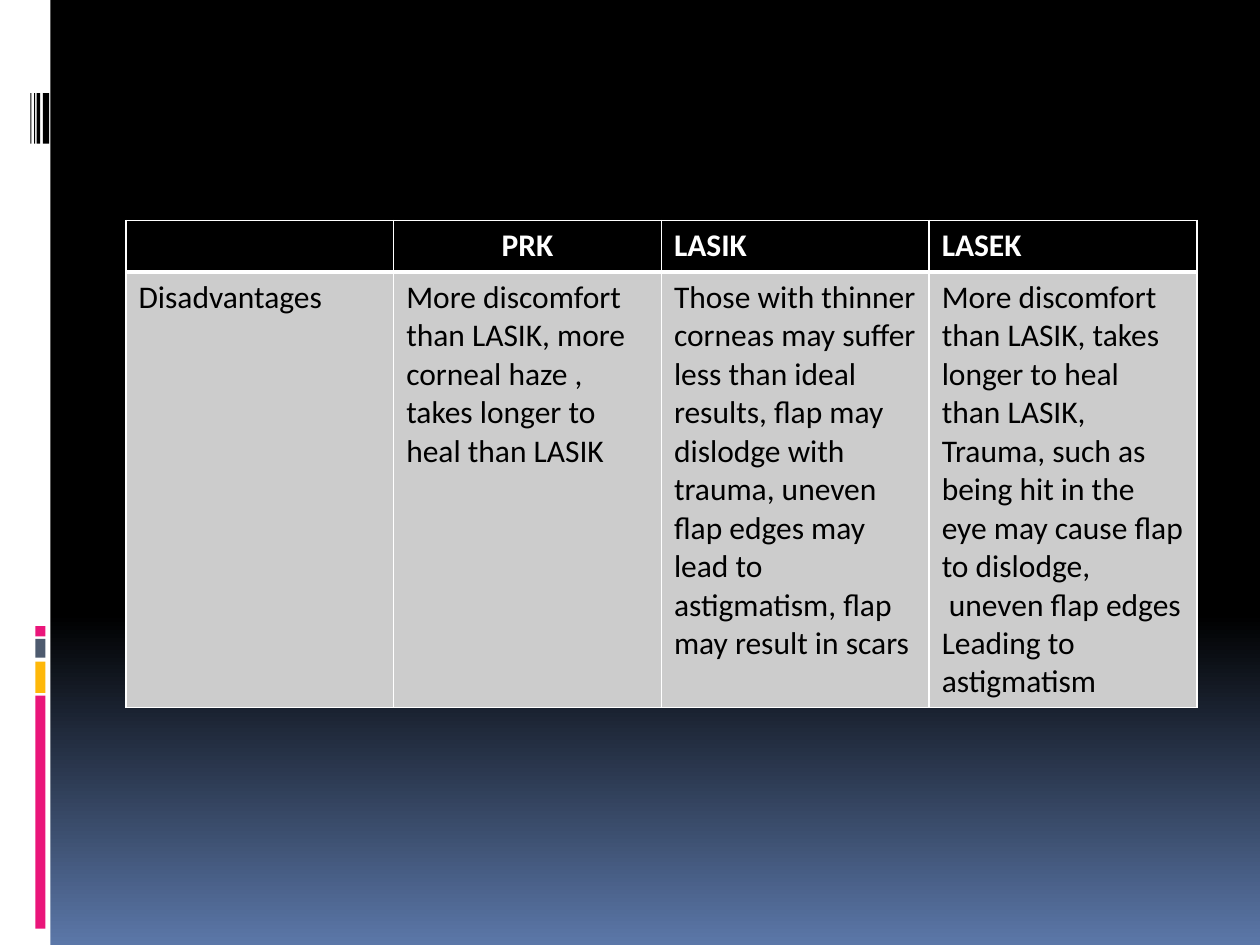
from dataclasses import dataclass

from lxml import etree
from pptx import Presentation, util as u
from pptx.dml.color import RGBColor
from pptx.enum import shapes, text
from pptx.oxml import ns


@dataclass(frozen=True)
class Theme:
    black: str = "000000"
    white: str = "FFFFFF"
    pink: str = "EA157A"
    amber: str = "FEB80A"
    slate: str = "4E5B6F"
    dusk: str = "5B77A8"
    body: str = "CCCCCC"
    font: str = "Calibri"
    size: int = 18
    thin: int = 1
    thick: int = 3


@dataclass(frozen=True)
class Bar:
    left: float
    top: float
    width: float
    height: float
    color: str


THEME = Theme()
WIDTH, HEIGHT = 10, 7.5
TABLE_LEFT, TABLE_TOP, TABLE_WIDTH = 1, 1.75, 8.5
ROW_HEIGHTS = (0.41, 3.4)

SIDE_PANEL = Bar(0, 0, 0.4, HEIGHT, THEME.white)
COLOR_BARS = [
    Bar(0.28, top, 0.08, height, color)
    for top, height, color in (
        (5.52, 1.85, THEME.pink),
        (5.25, 0.25, THEME.amber),
        (5.07, 0.15, THEME.slate),
        (4.97, 0.08, THEME.pink),
    )
]
BARCODE = [
    Bar(left, 0.74, width, 0.4, THEME.black)
    for left, width in ((0.34, 0.05), (0.29, 0.03), (0.27, 0.01), (0.24, 0.01))
]

PROCEDURES = ("", "PRK", "LASIK", "LASEK")
DISADVANTAGES = (
    "Disadvantages",
    "More discomfort than LASIK, more corneal haze , takes longer to heal than LASIK",
    "Those with thinner corneas may suffer less than ideal results, flap may dislodge "
    "with trauma, uneven flap edges may lead to astigmatism, flap may result in scars",
    "More discomfort than LASIK, takes longer to heal than LASIK,\n"
    "Trauma, such as being hit in the eye may cause flap to dislodge,\n"
    " uneven flap edges\n"
    "Leading to astigmatism",
)


def rgb(color: str) -> RGBColor:
    return RGBColor.from_string(color)


def paint_background(slide) -> None:
    fill = slide.background.fill
    fill.gradient()
    fill.gradient_angle = 270
    for stop, position, color in zip(
        fill.gradient_stops, (0.65, 1), (THEME.black, THEME.dusk)
    ):
        stop.position = position
        stop.color.rgb = rgb(color)


def draw_bar(slide, bar: Bar) -> None:
    box = map(u.Inches, (bar.left, bar.top, bar.width, bar.height))
    rect = slide.shapes.add_shape(shapes.MSO_SHAPE.RECTANGLE, *box)
    rect.shadow.inherit = False
    rect.fill.solid()
    rect.fill.fore_color.rgb = rgb(bar.color)
    rect.line.fill.background()


def set_borders(cell, top: int, bottom: int) -> None:
    properties = cell._tc.get_or_add_tcPr()
    edges = (("L", THEME.thin), ("R", THEME.thin), ("T", top), ("B", bottom))
    for index, (edge, points) in enumerate(edges):
        line = etree.Element(ns.qn(f"a:ln{edge}"), w=str(u.Pt(points)))
        fill = etree.SubElement(line, ns.qn("a:solidFill"))
        etree.SubElement(fill, ns.qn("a:srgbClr"), val=THEME.white)
        properties.insert(index, line)


def write_cell(cell, content: str, header: bool) -> None:
    cell.fill.solid()
    cell.fill.fore_color.rgb = rgb(THEME.black if header else THEME.body)
    if header:
        set_borders(cell, top=THEME.thin, bottom=THEME.thick)
    else:
        set_borders(cell, top=THEME.thick, bottom=THEME.thin)
    frame = cell.text_frame
    for index, line in enumerate(content.split("\n") if content else ()):
        paragraph = frame.add_paragraph() if index else frame.paragraphs[0]
        if line == "PRK":
            paragraph.alignment = text.PP_ALIGN.CENTER
        run = paragraph.add_run()
        run.text = line
        run.font.name = THEME.font
        run.font.size = u.Pt(THEME.size)
        run.font.bold = header
        run.font.color.rgb = rgb(THEME.white if header else THEME.black)


def draw_comparison(slide) -> None:
    rows = (PROCEDURES, DISADVANTAGES)
    box = map(u.Inches, (TABLE_LEFT, TABLE_TOP, TABLE_WIDTH, sum(ROW_HEIGHTS)))
    table = slide.shapes.add_table(len(rows), len(PROCEDURES), *box).table
    table.horz_banding = False
    for r, (contents, height) in enumerate(zip(rows, ROW_HEIGHTS)):
        table.rows[r].height = u.Inches(height)
        for c, content in enumerate(contents):
            write_cell(table.cell(r, c), content, header=r == 0)


def main() -> None:
    deck = Presentation()
    deck.slide_width, deck.slide_height = u.Inches(WIDTH), u.Inches(HEIGHT)
    slide = deck.slides.add_slide(deck.slide_layouts[6])
    paint_background(slide)
    for bar in (SIDE_PANEL, *COLOR_BARS, *BARCODE):
        draw_bar(slide, bar)
    draw_comparison(slide)
    deck.save("out.pptx")


if __name__ == "__main__":
    main()
